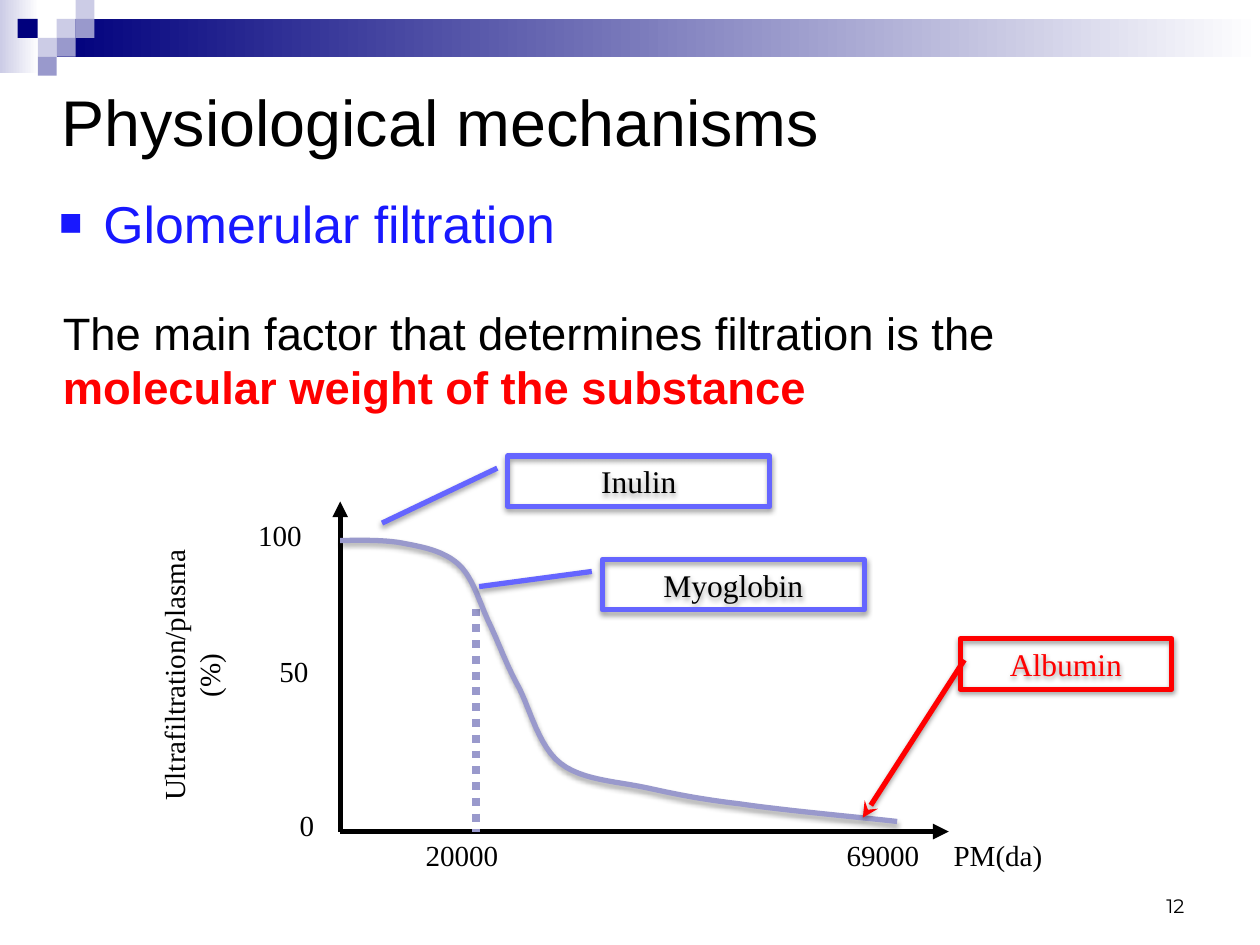
from dataclasses import dataclass

from lxml import etree
from pptx import Presentation
from pptx.dml.color import RGBColor
from pptx.enum.dml import MSO_LINE
from pptx.enum.shapes import MSO_CONNECTOR, MSO_SHAPE
from pptx.enum.text import MSO_ANCHOR, MSO_AUTO_SIZE, PP_ALIGN
from pptx.oxml import parse_xml
from pptx.oxml.ns import nsdecls, qn
from pptx.util import Inches, Pt


@dataclass(frozen=True)
class Theme:
    black: str = "000000"
    white: str = "FFFFFF"
    red: str = "FF0000"
    navy: str = "00007D"
    blue: str = "1818FF"
    callout: str = "6565FF"
    lilac: str = "9999CC"
    pale: str = "CCCCE6"
    sans: str = "Arial"
    serif: str = "Times New Roman"
    number_font: str = "Montserrat"
    title: float = 36.9
    heading: float = 29.6
    body: float = 25.9
    label: float = 18
    axis: float = 16.6
    number: float = 11.1
    stroke: float = 3


THEME = Theme()
prs = Presentation()
prs.slide_width, prs.slide_height = Inches(10), Inches(7.5)
COL, ROW = prs.slide_width / 100, prs.slide_height / 75
slide = prs.slides.add_slide(prs.slide_layouts[6])
shapes = slide.shapes


def cells(*lengths):
    """Turn alternating column and row counts into slide lengths."""
    return [round(n * (ROW if i % 2 else COL)) for i, n in enumerate(lengths)]


def write(frame, lines, size, font, align=PP_ALIGN.LEFT, **format_values):
    """Fill a frame; each line is a list of (text, colour, bold) runs."""
    for name, value in format_values.items():
        setattr(frame, name, value)
    for i, runs in enumerate(lines):
        paragraph = frame.paragraphs[0] if i == 0 else frame.add_paragraph()
        paragraph.alignment = align
        for text, colour, bold in runs:
            run = paragraph.add_run()
            run.text = text
            run.font.size, run.font.name, run.font.bold = Pt(size), font, bold
            run.font.color.rgb = RGBColor.from_string(colour)


# Header band and mosaic
header = [
    ((0, 0, 3.1, 5.8), (THEME.pale, THEME.white)),
    ((4.5, 1.5, 95.5, 3), (THEME.navy, THEME.white)),
    ((1.4, 1.5, 1.6, 1.5), (THEME.navy,)),
]
mosaic = [
    (3, 1, THEME.pale), (4, 0, THEME.pale), (4, 1, THEME.lilac),
    (2, 2, THEME.pale), (3, 2, THEME.lilac), (2, 3, THEME.lilac),
]
TILE = 1.5
header += [((c * TILE, r * TILE, TILE, TILE), (colour,)) for c, r, colour in mosaic]
for place, colours in header:
    block = shapes.add_shape(MSO_SHAPE.RECTANGLE, *cells(*place))
    block.shadow.inherit = False
    block.line.fill.background()
    if len(colours) == 1:
        block.fill.solid()
        block.fill.fore_color.rgb = RGBColor.from_string(colours[0])
    else:
        block.fill.gradient()
        block.fill.gradient_angle = 0
        for stop, position, colour in zip(block.fill.gradient_stops, (0, 1), colours):
            stop.position = position
            stop.color.rgb = RGBColor.from_string(colour)

# Title, heading, statement and slide number
title = shapes.add_textbox(*cells(3.9, 5.8, 91.6, 7.5))
write(title.text_frame, [[("Physiological mechanisms", THEME.black, False)]],
      THEME.title, THEME.sans, word_wrap=True, vertical_anchor=MSO_ANCHOR.MIDDLE)

heading = shapes.add_textbox(*cells(3.8, 14.8, 50.4, 6.7))
write(heading.text_frame, [[("Glomerular filtration", THEME.blue, False)]],
      THEME.heading, THEME.sans, word_wrap=True, margin_left=Inches(0.09),
      margin_right=Inches(0.09), margin_top=Inches(0.04), margin_bottom=Inches(0.04))
heading_line = heading.text_frame.paragraphs[0]
heading_line.space_before = Pt(THEME.heading * 0.2)
bullet = heading_line._p.get_or_add_pPr()
indent = Inches(0.35)
bullet.set("marL", str(indent))
bullet.set("indent", str(-indent))
for xml in (
    f'<a:buClr {nsdecls("a")}><a:srgbClr val="{THEME.blue}"/></a:buClr>',
    f'<a:buSzPct {nsdecls("a")} val="75000"/>',
    f'<a:buFont {nsdecls("a")} typeface="{THEME.sans}"/>',
    f'<a:buChar {nsdecls("a")} char="■"/>',
):
    bullet.append(parse_xml(xml))

statement = shapes.add_textbox(*cells(4, 23.7, 90.3, 9.6))
write(statement.text_frame,
      [[("The main factor that determines filtration is the ", THEME.black, False),
        ("molecular weight of the substance", THEME.red, True)]],
      THEME.body, THEME.sans, word_wrap=True)
statement.text_frame.paragraphs[0].space_before = Pt(THEME.body * 0.2)

number = shapes.add_textbox(*cells(71.7, 68.3, 23.3, 5))
write(number.text_frame, [[("12", THEME.black, False)]], THEME.number, THEME.number_font,
      PP_ALIGN.RIGHT, word_wrap=True, vertical_anchor=MSO_ANCHOR.BOTTOM)

# Axes and the threshold line
ORIGIN = (27, 66)
threshold = 37.8
for ends, colour, width, is_axis in (
    ((*ORIGIN, 75.3, ORIGIN[1]), THEME.black, THEME.stroke, True),
    ((*ORIGIN, ORIGIN[0], 39.8), THEME.black, THEME.stroke, True),
    ((threshold, 48.3, threshold, ORIGIN[1]), THEME.lilac, THEME.stroke * 1.5, False),
):
    rule = shapes.add_connector(MSO_CONNECTOR.STRAIGHT, *cells(*ends))
    rule.line.color.rgb = RGBColor.from_string(colour)
    rule.line.width = Pt(width)
    properties = rule._element.spPr
    if is_axis:
        etree.SubElement(properties.find(qn("a:ln")), qn("a:tailEnd"), type="triangle")
    else:
        rule.line.dash_style = MSO_LINE.ROUND_DOT
    etree.SubElement(properties, qn("a:effectLst"))

# Axis labels
for text, place in (
    ("PM(da)", (74.7, 66, 9.1, 3.8)),
    ("0", (22.8, 63.6, 3.2, 3.8)),
    ("100", (19.5, 40.6, 5.5, 3.8)),
    ("50", (21.2, 51.4, 4.4, 3.8)),
    ("20000", (32.8, 66, 7.9, 3.8)),
    ("69000", (66.2, 66, 7.9, 3.8)),
):
    label = shapes.add_textbox(*cells(*place))
    write(label.text_frame, [[(text, THEME.black, False)]], THEME.axis, THEME.serif,
          word_wrap=False, auto_size=MSO_AUTO_SIZE.SHAPE_TO_FIT_TEXT)
ratio = shapes.add_textbox(*cells(1.4, 50.3, 27.6, 6.6))
ratio.rotation = 270
write(ratio.text_frame,
      [[("Ultrafiltration/plasma", THEME.black, False)], [("(%)", THEME.black, False)]],
      THEME.axis, THEME.serif, PP_ALIGN.CENTER, word_wrap=True)

# Filtration curve: Bézier segments sampled in equal steps
start = (27, 42.9)
segments = [
    ((27.8, 42.9), (30.3, 42.8), (31.9, 43.1)),
    ((33.5, 43.4), (35.2, 43.7), (36.4, 44.8)),
    ((37.6, 45.9), (38.1, 48), (38.9, 49.6)),
    ((39.7, 51.3), (40.2, 52.8), (41.2, 54.6)),
    ((42.1, 56.4), (42.8, 59.3), (44.5, 60.6)),
    ((46.2, 61.9), (48.8, 62), (51.2, 62.5)),
    ((53.5, 63), (55.3, 63.4), (58.7, 63.8)),
    ((62, 64.3), (68.6, 64.9), (71.2, 65.2)),
]
STEPS = 12
points, knot = [], start
for bend_out, bend_in, end in segments:
    for t in (step / STEPS for step in range(1, STEPS + 1)):
        u = 1 - t
        points.append(cells(*(
            u**3 * a + 3 * u * u * t * b + 3 * u * t * t * c + t**3 * d
            for a, b, c, d in zip(knot, bend_out, bend_in, end))))
    knot = end
outline = shapes.build_freeform(*cells(*start))
outline.add_line_segments(points, close=False)
curve = outline.convert_to_shape()
shadowed = [(curve, THEME.lilac, 35, 1.8)]

# Callouts: place, then leader ends as shares of the box (y, x, y, x)
for text, place, leader, colour, ink in (
    ("Albumin", (76.2, 50.7, 16.8, 4), (0.42, 0.02, 3.55, -0.46), THEME.red, THEME.red),
    ("Myoglobin", (47.8, 44.4, 20.8, 4), (0.24, -0.04, 0.54, -0.47), THEME.callout, THEME.black),
    ("Inulin", (40.3, 36.2, 20.8, 4), (0.24, -0.04, 1.33, -0.48), THEME.callout, THEME.black),
):
    callout = shapes.add_shape(MSO_SHAPE.LINE_CALLOUT_1, *cells(*place))
    for i, share in enumerate(leader):
        callout.adjustments[i] = share
    write(callout.text_frame, [[(text, ink, False)]], THEME.label, THEME.serif,
          PP_ALIGN.CENTER, word_wrap=True)
    shadowed.append((callout, colour, 38, 1.6))

for figure, colour, opacity, distance in shadowed:
    figure.fill.background()
    figure.line.color.rgb = RGBColor.from_string(colour)
    figure.line.width = Pt(THEME.stroke)
    figure.shadow.inherit = False
    properties = figure._element.spPr
    if colour == THEME.red:
        etree.SubElement(properties.find(qn("a:ln")), qn("a:tailEnd"), type="stealth")
    properties.find(qn("a:effectLst")).append(parse_xml(
        f'<a:outerShdw {nsdecls("a")} blurRad="{Pt(3.1)}" dist="{Pt(distance)}" '
        f'dir="5400000" rotWithShape="0"><a:srgbClr val="{THEME.black}">'
        f'<a:alpha val="{opacity * 1000}"/></a:srgbClr></a:outerShdw>'))

prs.save("out.pptx")
